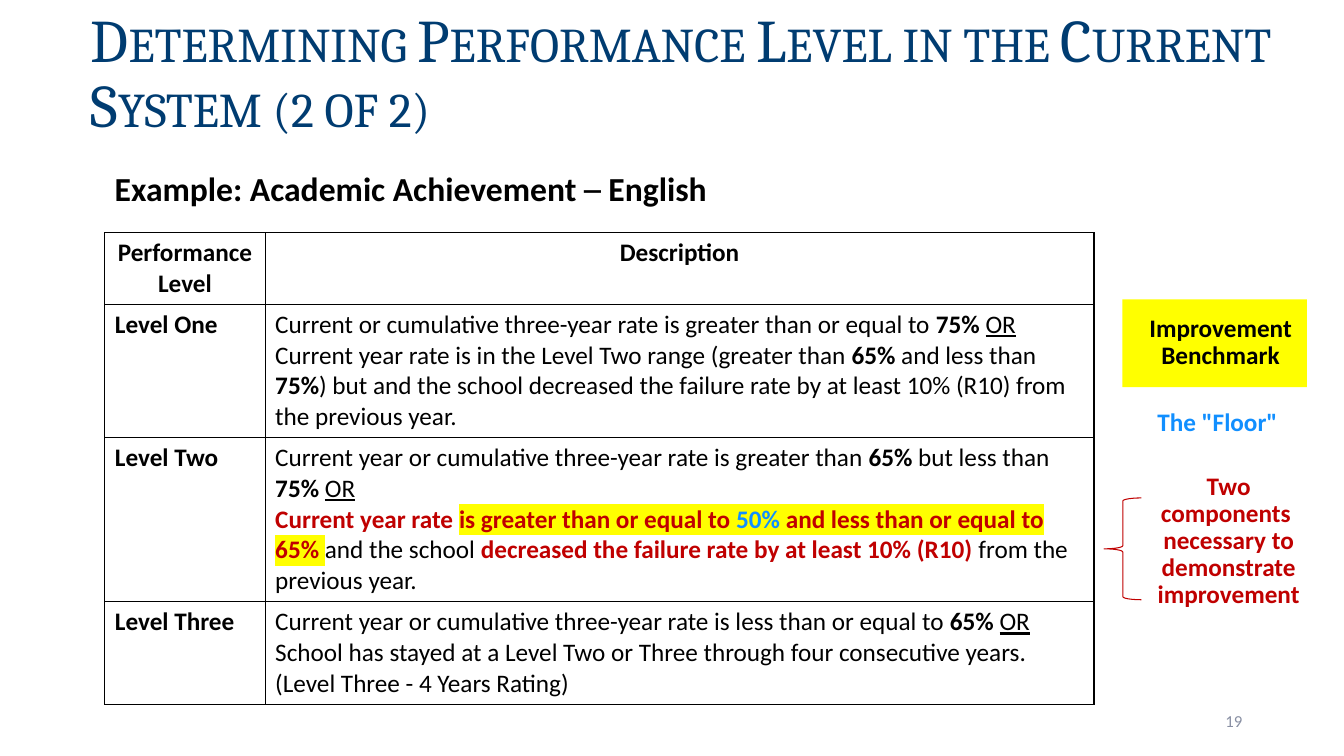
from lxml import etree
from pptx import Presentation
from pptx import util as u
from pptx.dml.color import RGBColor
from pptx.enum import shapes, text
from pptx.oxml.ns import qn

SLIDE_WIDTH, SLIDE_HEIGHT = u.Inches(13.33), u.Inches(7.5)
COLORS = {
    "navy": "003C71", "gray": "888FA3", "black": "000000",
    "red": "C00000", "blue": "118FFF", "yellow": "FFFF00",
}
LEFT, CENTER, RIGHT = text.PP_ALIGN.LEFT, text.PP_ALIGN.CENTER, text.PP_ALIGN.RIGHT
TOP, MIDDLE, BOTTOM = text.MSO_ANCHOR.TOP, text.MSO_ANCHOR.MIDDLE, text.MSO_ANCHOR.BOTTOM

BOLD = {"bold": True}
UNDERLINE = {"underline": True}
RED = {"bold": True, "color": "red"}
RED_MARKED = {**RED, "highlight": "yellow"}
BLUE_MARKED = {**RED_MARKED, "color": "blue"}

COLUMN_SHARES = [11.93, 61.67]
ROW_SHARES = [9.47, 17.6, 21.73, 13.6]
LEVELS = [
    ("Level One", [
        [("Current or cumulative three-year rate is greater than or equal to ", {}),
         ("75% ", BOLD), ("OR", UNDERLINE)],
        [("Current year rate is in the Level Two range (greater than ", {}),
         ("65%", BOLD), (" and less than ", {}), ("75%", BOLD),
         (") but and the school decreased the failure rate by at least 10% (R10) "
          "from the previous year.", {})],
    ]),
    ("Level Two", [
        [("Current year or cumulative three-year rate is greater than ", {}),
         ("65% ", BOLD), ("but less than ", {}), ("75% ", BOLD), ("OR", UNDERLINE)],
        [("Current year rate ", RED), ("is greater than or equal to ", RED_MARKED),
         ("50%", BLUE_MARKED), (" and less than or equal to 65%", RED_MARKED),
         (" ", {"highlight": "yellow"}), ("and the school ", {}),
         ("decreased the failure rate by at least 10% (R10) ", RED),
         ("from the previous year.", {})],
    ]),
    ("Level Three", [
        [("Current year or cumulative three-year rate is less than or equal to ", {}),
         ("65% ", BOLD), ("OR", UNDERLINE)],
        [("School has stayed at a Level Two or Three through four consecutive years. "
          "(Level Three - 4 Years Rating)", {})],
    ]),
]


def across(share):
    return round(SLIDE_WIDTH * share / 100)


def down(share):
    return round(SLIDE_HEIGHT * share / 100)


def area(left, top, width, height):
    return across(left), down(top), across(width), down(height)


def rgb(name):
    return RGBColor.from_string(COLORS[name])


def add_run(paragraph, content, size=18, font="Calibri", color="black", bold=False,
            underline=False, highlight=None, small_caps=False):
    run = paragraph.add_run()
    run.text = content
    run.font.size = u.Pt(size)
    run.font.bold = bold
    run.font.underline = underline
    run.font.color.rgb = rgb(color)
    run.font.name = font
    properties = run.font._element
    if small_caps:
        properties.set("cap", "small")
    if highlight:
        mark = etree.Element(qn("a:highlight"))
        etree.SubElement(mark, qn("a:srgbClr"), val=COLORS[highlight])
        properties.find(qn("a:solidFill")).addnext(mark)


def write(frame, paragraphs, align=LEFT, anchor=TOP, spacing=None, before=0,
          indent=0, inset=0.1, **style):
    if isinstance(paragraphs, str):
        paragraphs = [[(paragraphs, {})]]
    frame.word_wrap = True
    frame.vertical_anchor = anchor
    frame.margin_left = u.Inches(inset)
    for index, runs in enumerate(paragraphs):
        paragraph = frame.add_paragraph() if index else frame.paragraphs[0]
        paragraph.alignment = align
        paragraph.line_spacing = spacing
        paragraph.space_before = u.Pt(before)
        if indent:
            paragraph._p.get_or_add_pPr().set("marL", str(u.Inches(indent)))
        for content, changes in runs:
            add_run(paragraph, content, **{**style, **changes})


def add_title(slide, content):
    title = slide.shapes.title
    title.left, title.top, title.width, title.height = area(0, 0, 100, 19.33)
    write(title.text_frame, content, anchor=BOTTOM, spacing=0.9, inset=0.9,
          size=43.2, font="Cambria", color="navy", small_caps=True)
    title.text_frame.auto_size = text.MSO_AUTO_SIZE.NONE


def add_label(slide, box, content, **style):
    label = slide.shapes.add_textbox(*box)
    write(label.text_frame, content, **style)


def add_shape(slide, kind, box, fill=None, line=None):
    shape = slide.shapes.add_shape(kind, *box)
    shape.shadow.inherit = False
    if fill:
        shape.fill.solid()
        shape.fill.fore_color.rgb = rgb(fill)
    else:
        shape.fill.background()
    if line:
        shape.line.color.rgb = rgb(line)
        shape.line.width = u.Pt(0.75)
    else:
        shape.line.fill.background()
    return shape


def add_callout(slide, box, content, color, fill=None):
    style = dict(align=CENTER, anchor=MIDDLE, spacing=0.9, before=10,
                 indent=0.12, bold=True, color=color)
    if fill:
        shape = add_shape(slide, shapes.MSO_SHAPE.RECTANGLE, box, fill)
        write(shape.text_frame, content, **style)
    else:
        add_label(slide, box, content, **style)


def outline_cell(cell):
    cell.fill.background()
    properties = cell._tc.get_or_add_tcPr()
    for index, side in enumerate(("lnL", "lnR", "lnT", "lnB")):
        border = etree.Element(qn(f"a:{side}"), w=str(u.Pt(1)))
        fill = etree.SubElement(border, qn("a:solidFill"))
        etree.SubElement(fill, qn("a:srgbClr"), val=COLORS["black"])
        properties.insert(index, border)


def add_levels_table(slide):
    box = area(7.8, 30.8, sum(COLUMN_SHARES), sum(ROW_SHARES))
    table = slide.shapes.add_table(len(ROW_SHARES), len(COLUMN_SHARES), *box).table
    table.first_row = table.horz_banding = False
    for column, share in zip(table.columns, COLUMN_SHARES):
        column.width = across(share)
    for row, share in zip(table.rows, ROW_SHARES):
        row.height = down(share)
    for cell in table.iter_cells():
        outline_cell(cell)
    for index, heading in enumerate(("Performance Level", "Description")):
        write(table.cell(0, index).text_frame, heading, align=CENTER, bold=True)
    for index, (level, description) in enumerate(LEVELS, start=1):
        write(table.cell(index, 0).text_frame, level, bold=True)
        write(table.cell(index, 1).text_frame, description)


def main():
    presentation = Presentation()
    presentation.slide_width, presentation.slide_height = SLIDE_WIDTH, SLIDE_HEIGHT
    slide = presentation.slides.add_slide(presentation.slide_layouts[5])
    add_title(slide, "Determining Performance Level in the Current System (2 of 2)")
    add_label(slide, area(70.67, 92.67, 22.5, 5.33), "19",
              align=RIGHT, anchor=MIDDLE, size=12, color="gray")
    add_levels_table(slide)
    add_label(slide, area(7.8, 21.6, 53.04, 6.67),
              "Example: Academic Achievement ─ English", size=24, bold=True)
    add_callout(slide, area(83.27, 53.33, 13.73, 5.33), 'The "Floor"', "blue")
    add_callout(slide, area(84.1, 61.73, 13.73, 19.73),
                "Two components\u00a0 necessary to demonstrate improvement".replace("\u00a0", " "), "red")
    add_shape(slide, shapes.MSO_SHAPE.LEFT_BRACE, area(82.15, 65.87, 2.78, 13.47), line="red")
    add_callout(slide, area(83.5, 39.6, 13.73, 11.6),
                "Improvement Benchmark", "black", fill="yellow")
    presentation.save("out.pptx")


if __name__ == "__main__":
    main()
